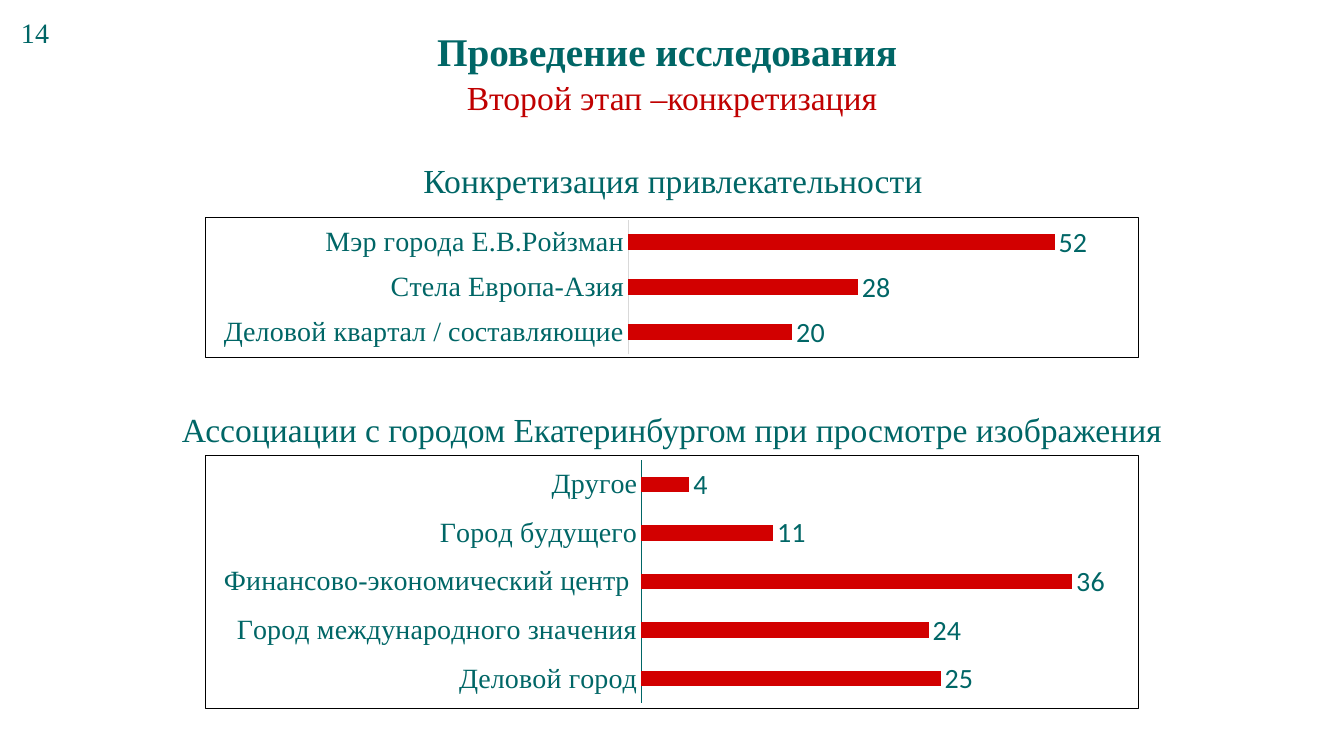
from dataclasses import dataclass

from lxml import etree
from pptx import Presentation
from pptx import util as u
from pptx.chart import data as chart_data
from pptx.dml import color
from pptx.enum import chart as chart_enum
from pptx.enum import text
from pptx.oxml import ns

TEAL = "006666"
RED = "C00000"
BAR_RED = "D20000"
SERIF = "Times New Roman"
SANS = "Calibri"


@dataclass
class Label:
    wording: str
    left: float
    top: float
    width: float
    height: float
    size: int
    hex_color: str = TEAL
    bold: bool = False
    centered: bool = True


@dataclass
class BarPanel:
    top: float
    height: float
    gap: int
    maximum: int
    axis_color: str
    values: dict[str, int]


LABELS = [
    Label("Проведение исследования ", 0, 0.22, 13.33, 0.57, 28, bold=True),
    Label("Второй этап –конкретизация", 0, 0.71, 13.33, 0.5, 24, RED),
    Label("Конкретизация привлекательности", 0.01, 1.54, 13.33, 0.5, 24),
    Label("Ассоциации с городом Екатеринбургом при просмотре изображения",
          0, 4.01, 13.33, 0.5, 24),
    Label("14", 0.11, 0.1, 0.48, 0.44, 20, centered=False),
]

PANELS = [
    BarPanel(2.15, 1.4, 182, 60, "D9D9D9", {
        "Деловой квартал / составляющие": 20,
        "Стела Европа-Азия": 28,
        "Мэр города Е.В.Ройзман": 52,
    }),
    BarPanel(4.51, 2.52, 219, 40, TEAL, {
        "Деловой город": 25,
        "Город международного значения": 24,
        "Финансово-экономический центр ": 36,
        "Город будущего": 11,
        "Другое": 4,
    }),
]


def rgb(hex_color: str) -> color.RGBColor:
    return color.RGBColor.from_string(hex_color)


def style_font(font, name: str, size: int, hex_color: str, bold: bool = False) -> None:
    font.name = name
    font.size = u.Pt(size)
    font.bold = bold
    font.color.rgb = rgb(hex_color)


def add_label(slide, label: Label) -> None:
    shape = slide.shapes.add_textbox(u.Inches(label.left), u.Inches(label.top),
                                     u.Inches(label.width), u.Inches(label.height))
    frame = shape.text_frame
    frame.word_wrap = label.centered
    frame.auto_size = text.MSO_AUTO_SIZE.SHAPE_TO_FIT_TEXT
    paragraph = frame.paragraphs[0]
    paragraph.text = label.wording
    paragraph.alignment = text.PP_ALIGN.CENTER if label.centered else text.PP_ALIGN.LEFT
    style_font(paragraph.font, SERIF, label.size, label.hex_color, label.bold)


def add_border(chart) -> None:
    border = etree.fromstring(
        f'<c:spPr {ns.nsdecls("c", "a")}><a:noFill/><a:ln w="{u.Pt(0.75)}">'
        '<a:solidFill><a:srgbClr val="000000"/></a:solidFill></a:ln></c:spPr>')
    chart.element.find(ns.qn("c:chart")).addnext(border)


def add_panel(slide, panel: BarPanel) -> None:
    table = chart_data.CategoryChartData()
    table.categories = list(panel.values)
    table.add_series("Series 1", list(panel.values.values()))
    chart = slide.shapes.add_chart(
        chart_enum.XL_CHART_TYPE.BAR_CLUSTERED, u.Inches(2.03), u.Inches(panel.top),
        u.Inches(9.27), u.Inches(panel.height), table).chart
    chart.has_legend = False
    chart.has_title = False
    style_font(chart.font, SANS, 10, "000000")
    add_border(chart)

    category_axis = chart.category_axis
    category_axis.major_tick_mark = chart_enum.XL_TICK_MARK.NONE
    category_axis.has_major_gridlines = False
    category_axis.format.line.color.rgb = rgb(panel.axis_color)
    category_axis.format.line.width = u.Pt(0.75)
    style_font(category_axis.tick_labels.font, SERIF, 20, TEAL)

    value_axis = chart.value_axis
    value_axis.minimum_scale = 0
    value_axis.maximum_scale = panel.maximum
    value_axis.has_major_gridlines = False
    value_axis.visible = False

    plot = chart.plots[0]
    plot.gap_width = panel.gap
    plot.vary_by_categories = False
    series = plot.series[0]
    series.format.fill.solid()
    series.format.fill.fore_color.rgb = rgb(BAR_RED)
    labels = series.data_labels
    labels.show_value = True
    labels.position = chart_enum.XL_LABEL_POSITION.OUTSIDE_END
    style_font(labels.font, SANS, 20, TEAL)


def main() -> None:
    presentation = Presentation()
    presentation.slide_width = u.Inches(13.33)
    presentation.slide_height = u.Inches(7.5)
    slide = presentation.slides.add_slide(presentation.slide_layouts[6])
    for label in LABELS:
        add_label(slide, label)
    for panel in PANELS:
        add_panel(slide, panel)
    presentation.save("out.pptx")


if __name__ == "__main__":
    main()
